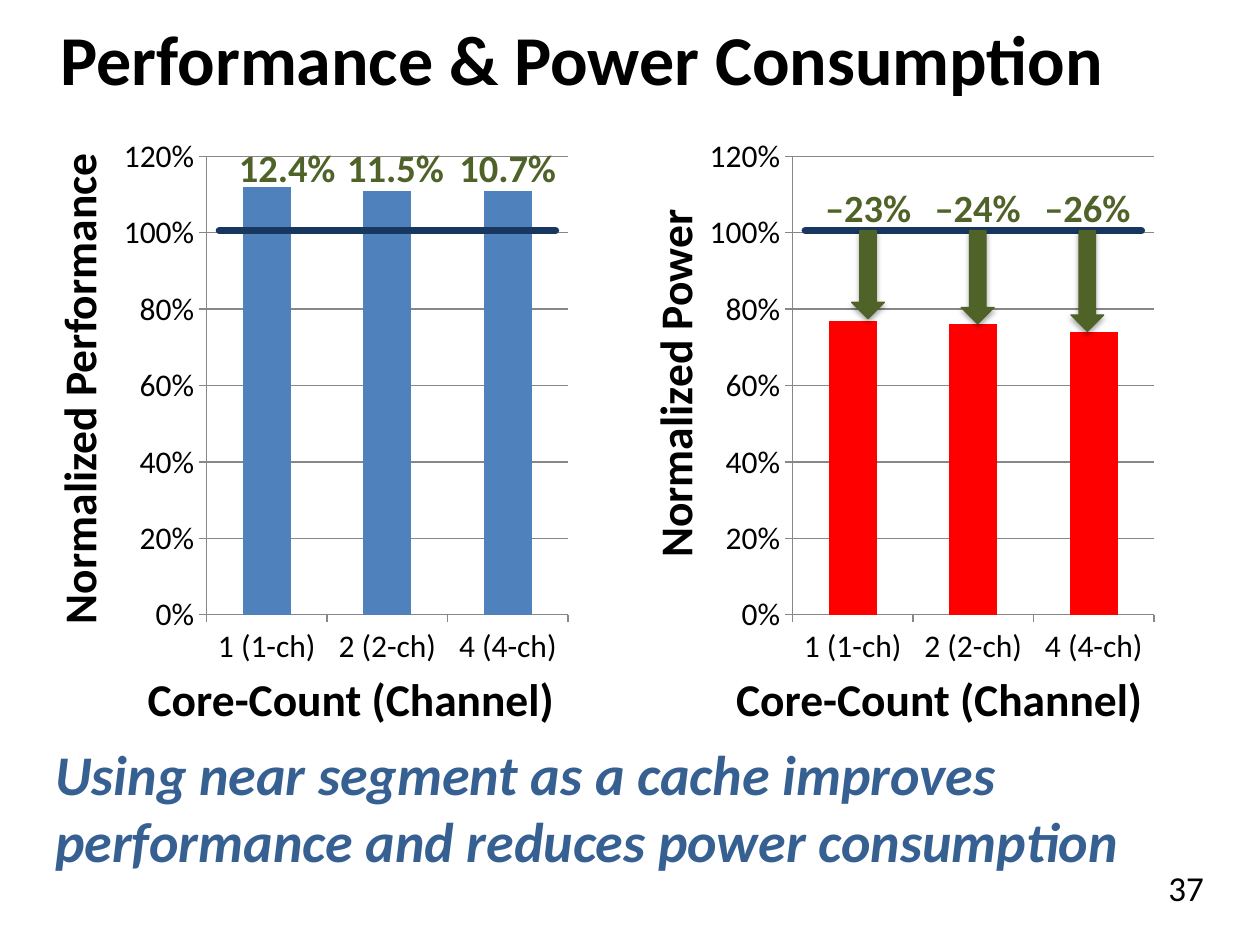
"""Build the slide comparing normalized performance and power by core count."""
from lxml import etree
from pptx import Presentation
from pptx.chart.data import CategoryChartData
from pptx.dml.color import RGBColor
from pptx.enum.chart import XL_CHART_TYPE, XL_TICK_MARK
from pptx.enum.shapes import MSO_CONNECTOR, MSO_SHAPE
from pptx.enum.text import MSO_ANCHOR, MSO_AUTO_SIZE, PP_ALIGN
from pptx.oxml import parse_xml
from pptx.oxml.ns import nsdecls, qn
from pptx.util import Inches, Pt

THEME = {
    "font": "Calibri",
    "text": "000000", "delta": "4F6228", "baseline": "17375E",
    "takeaway": "376092", "grid": "878787",
    "title_size": 40, "takeaway_size": 32, "axis_title_size": 26,
    "delta_size": 22, "number_size": 20, "tick_size": 18,
}
TITLE = "Performance & Power Consumption"
TAKEAWAY = "Using near segment as a cache improves performance and reduces power consumption"
SLIDE_NUMBER = "37"
CATEGORIES = ["1 (1-ch)", "2 (2-ch)", "4 (4-ch)"]
CATEGORY_TITLE = "Core-Count (Channel)"
PANELS = [
    {"title": "Normalized Performance", "title_center": (0.62, 3.08), "left": 0.91,
     "color": "4F81BD", "values": [1.12, 1.11, 1.11],
     "deltas": ["12.4%", "11.5%", "10.7%"], "delta_top": 1.09,
     "delta_centers": [2.28, 3.14, 4.03], "category_right": 4.5, "drops": []},
    {"title": "Normalized Power", "title_center": (5.35, 3.04), "left": 5.56,
     "color": "FF0000", "values": [0.77, 0.76, 0.74],
     "deltas": ["–23%", "–24%", "–26%"], "delta_top": 1.41,
     "delta_centers": [6.89, 7.76, 8.63], "category_right": 9.17,
     "drops": [0.7, 0.74, 0.8]},
]
CHART_TOP, CHART_WIDTH, CHART_HEIGHT = 1, 3.67, 4.37
PLOT_LEFT, PLOT_TOP, PLOT_WIDTH, PLOT_HEIGHT = 0.73, 0.24, 2.87, 3.64
DELTA_WIDTH = 1.3
BASELINE_Y, BASELINE_INSET, BASELINE_WIDTH = 1.83, 0.83, 2.67
ARROW_WIDTH = 0.26


def rgb(name):
    return RGBColor.from_string(THEME.get(name, name))


def style(font, size, color="text", bold=False, italic=False):
    font.name, font.size = THEME["font"], Pt(THEME[size])
    font.bold, font.italic = bold, italic
    font.color.rgb = rgb(color)


def write(frame, text, size, color="text", bold=True, italic=False,
          align=PP_ALIGN.LEFT, anchor=MSO_ANCHOR.TOP):
    frame.word_wrap, frame.vertical_anchor = True, anchor
    paragraph = frame.paragraphs[0]
    paragraph.alignment = align
    run = paragraph.add_run()
    run.text = text
    style(run.font, size, color, bold, italic)


def add_label(slide, box, text, size, rotation=0, **options):
    label = slide.shapes.add_textbox(*map(Inches, box))
    label.rotation = rotation
    write(label.text_frame, text, size, **options)


def fix_plot_area(chart):
    layout = parse_xml(f'<c:layout {nsdecls("c")}><c:manualLayout/></c:layout>')
    settings = {
        "layoutTarget": "inner", "xMode": "edge", "yMode": "edge",
        "x": PLOT_LEFT / CHART_WIDTH, "y": PLOT_TOP / CHART_HEIGHT,
        "w": PLOT_WIDTH / CHART_WIDTH, "h": PLOT_HEIGHT / CHART_HEIGHT,
    }
    for tag, value in settings.items():
        etree.SubElement(layout[0], qn(f"c:{tag}")).set("val", str(value))
    plot_area = chart.plots[0]._element.getparent()
    for existing in plot_area.findall(qn("c:layout")):
        plot_area.remove(existing)
    plot_area.insert(0, layout)


def add_bar_chart(slide, panel):
    data = CategoryChartData(number_format="0%")
    data.categories = CATEGORIES
    data.add_series("Series 1", panel["values"])
    area = map(Inches, (panel["left"], CHART_TOP, CHART_WIDTH, CHART_HEIGHT))
    chart = slide.shapes.add_chart(XL_CHART_TYPE.COLUMN_CLUSTERED, *area, data).chart
    chart.has_legend = chart.has_title = False
    style(chart.font, "tick_size")
    plot = chart.plots[0]
    plot.gap_width, plot.vary_by_categories = 150, False
    bars = plot.series[0]
    bars.format.fill.solid()
    bars.format.fill.fore_color.rgb = rgb(panel["color"])
    values = chart.value_axis
    values.minimum_scale, values.maximum_scale, values.major_unit = 0, 1.2, 0.2
    values.tick_labels.number_format = "0%"
    values.tick_labels.number_format_is_linked = False
    values.has_major_gridlines = True
    for axis in (values, chart.category_axis):
        axis.major_tick_mark = XL_TICK_MARK.OUTSIDE
        style(axis.tick_labels.font, "tick_size")
    for ruled in (values, values.major_gridlines, chart.category_axis):
        ruled.format.line.color.rgb = rgb("grid")
        ruled.format.line.width = Pt(0.75)
    fix_plot_area(chart)


def add_baseline(slide, left):
    start, end, y = map(Inches, (left, left + BASELINE_WIDTH, BASELINE_Y))
    baseline = slide.shapes.add_connector(MSO_CONNECTOR.STRAIGHT, start, y, end, y)
    baseline.line.color.rgb, baseline.line.width = rgb("baseline"), Pt(4)
    baseline.line._get_or_add_ln().set("cap", "rnd")
    etree.SubElement(baseline._element.spPr, qn("a:effectLst"))


def add_drop_arrow(slide, center, height):
    box = map(Inches, (center - ARROW_WIDTH / 2, BASELINE_Y, ARROW_WIDTH, height))
    arrow = slide.shapes.add_shape(MSO_SHAPE.DOWN_ARROW, *box)
    arrow.fill.solid()
    arrow.fill.fore_color.rgb = arrow.line.color.rgb = rgb("delta")
    arrow.line.width = Pt(0.75)
    arrow.shadow.inherit = False
    arrow._element.spPr.find(qn("a:effectLst")).append(parse_xml(
        f'<a:outerShdw {nsdecls("a")} blurRad="{Pt(3.1)}" dist="{Pt(1.8)}" dir="5400000" '
        'rotWithShape="0"><a:srgbClr val="000000"><a:alpha val="35000"/></a:srgbClr>'
        '</a:outerShdw>'))


def add_panel(slide, panel):
    add_bar_chart(slide, panel)
    x, y = panel["title_center"]
    add_label(slide, (x - 2, y - 0.33, 4, 0.67), panel["title"], "axis_title_size",
              rotation=270, align=PP_ALIGN.CENTER, anchor=MSO_ANCHOR.MIDDLE)
    add_label(slide, (panel["category_right"] - 3.8, 5.29, 3.8, 0.5), CATEGORY_TITLE,
              "axis_title_size", align=PP_ALIGN.RIGHT, anchor=MSO_ANCHOR.MIDDLE)
    add_baseline(slide, panel["left"] + BASELINE_INSET)
    for center, height in zip(panel["delta_centers"], panel["drops"]):
        add_drop_arrow(slide, center, height)
    for center, delta in zip(panel["delta_centers"], panel["deltas"]):
        box = (center - DELTA_WIDTH / 2, panel["delta_top"], DELTA_WIDTH, 0.45)
        add_label(slide, box, delta, "delta_size", color="delta", align=PP_ALIGN.CENTER)


def main():
    deck = Presentation()
    deck.slide_width, deck.slide_height = Inches(10), Inches(7.5)
    slide = deck.slides.add_slide(deck.slide_layouts[5])
    title = slide.shapes.title
    title.left, title.top, title.width, title.height = map(Inches, (0, 0, 10, 0.92))
    title.text_frame.auto_size = MSO_AUTO_SIZE.NONE
    title.text_frame.margin_left = Inches(0.48)
    write(title.text_frame, TITLE, "title_size", anchor=MSO_ANCHOR.MIDDLE)
    for panel in PANELS:
        add_panel(slide, panel)
    add_label(slide, (0.34, 5.82, 9.41, 1.18), TAKEAWAY, "takeaway_size",
              color="takeaway", italic=True)
    add_label(slide, (8.83, 6.83, 1.17, 0.67), SLIDE_NUMBER, "number_size",
              bold=False, align=PP_ALIGN.CENTER)
    deck.save("out.pptx")


if __name__ == "__main__":
    main()
